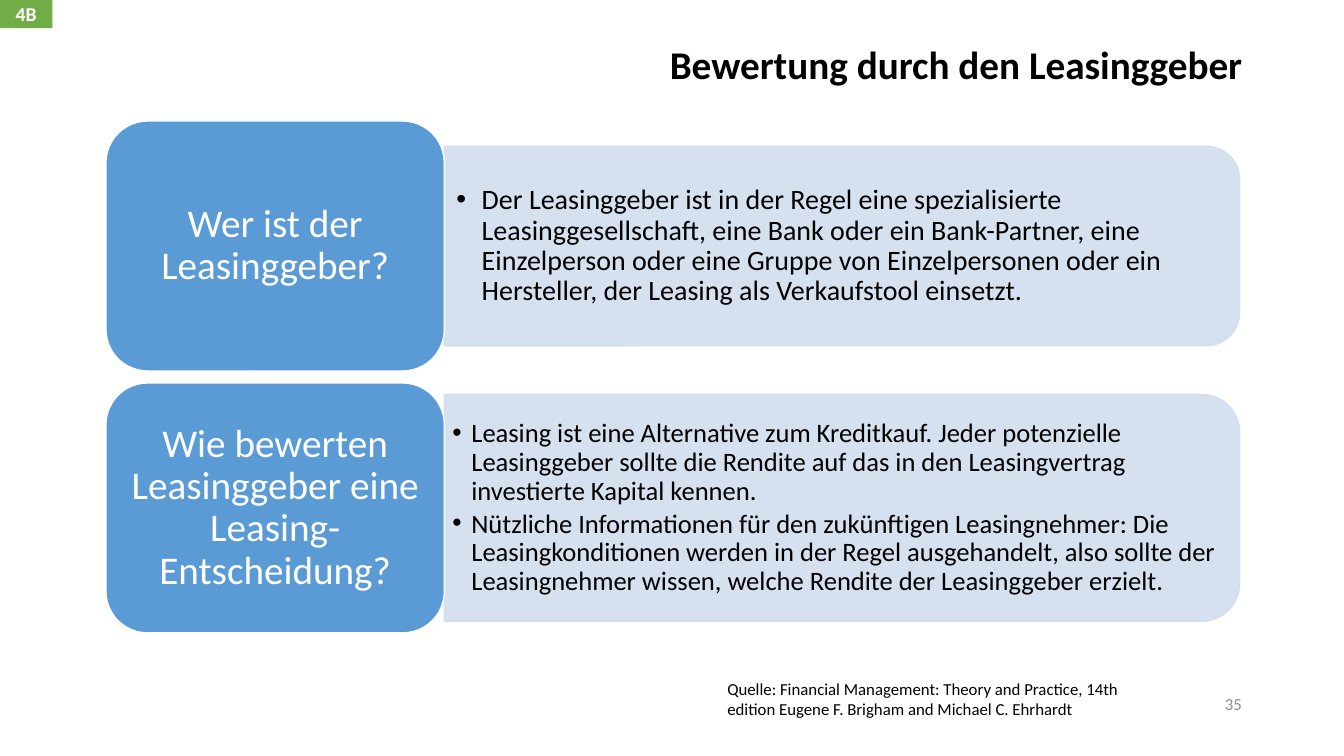
from lxml.etree import SubElement
from pptx import Presentation
from pptx.dml.color import RGBColor
from pptx.enum.shapes import MSO_SHAPE
from pptx.enum.text import MSO_ANCHOR, PP_ALIGN
from pptx.oxml.ns import qn
from pptx.util import Cm, Pt

TITLE = "Bewertung durch den Leasinggeber"
BADGE = "4B"
PAGE_NUMBER = "35"
SOURCE = ("Quelle: Financial Management: Theory and Practice, 14th edition "
          "Eugene F. Brigham and Michael C. Ehrhardt")
ROWS = [
    {"question": "Wer ist der Leasinggeber?",
     "answers": [
         "Der Leasinggeber ist in der Regel eine spezialisierte Leasinggesellschaft, "
         "eine Bank oder ein Bank-Partner, eine Einzelperson oder eine Gruppe von "
         "Einzelpersonen oder ein Hersteller, der Leasing als Verkaufstool einsetzt."],
     "style": "answer", "panel_height": 5.03, "indent": 0.64, "insets": (0.3, 0.15)},
    {"question": "Wie bewerten Leasinggeber eine Leasing-Entscheidung?",
     "answers": [
         "Leasing ist eine Alternative zum Kreditkauf. Jeder potenzielle Leasinggeber "
         "sollte die Rendite auf das in den Leasingvertrag investierte Kapital kennen.",
         "Nützliche Informationen für den zukünftigen Leasingnehmer: Die "
         "Leasingkonditionen werden in der Regel ausgehandelt, also sollte der "
         "Leasingnehmer wissen, welche Rendite der Leasinggeber erzielt."],
     "style": "dense_answer", "panel_height": 5.72, "indent": 0.48, "insets": (0.2, 0.1)},
]

THEME = {
    "font": "Calibri",
    "colors": {"card": "5B9BD5", "panel": "D2DEEF", "badge": "70AD47",
               "white": "FFFFFF", "black": "000000", "gray": "8C8C8C"},
    "panel_opacity": 90,
    "text": {  # size, bold, colour
        "title": (28, True, "black"), "question": (28, False, "white"),
        "answer": (20, False, "black"), "dense_answer": (19, False, "black"),
        "badge": (14, True, "white"), "small": (12, False, "black"),
        "page": (12, False, "gray"),
    },
}

# Lengths in centimetres
SLIDE_SIZE = (33.87, 19.05)
CARD_LEFT, CARD_TOP, CARD_WIDTH, CARD_HEIGHT = 2.67, 3.05, 8.53, 6.3
ROW_PITCH = 6.6
PANEL_LENGTH = 20.04
CORNER_SHARE = 0.05  # part of the panel height lost to its rounded corners
DEFAULT_INSETS = (0.25, 0.13)


def color(name):
    return RGBColor.from_string(THEME["colors"][name])


def add_solid(slide, kind, box, fill, line=None):
    shape = slide.shapes.add_shape(kind, *map(Cm, box))
    shape.shadow.inherit = False
    shape.fill.solid()
    shape.fill.fore_color.rgb = color(fill)
    if line:
        shape.line.color.rgb = color(line)
        shape.line.width = Pt(1)
    else:
        shape.line.fill.background()
    return shape


def set_opacity(shape, percent):
    for color_element in shape.fill._xPr.iter(qn("a:srgbClr")):
        SubElement(color_element, qn("a:alpha"), val=str(percent * 1000))


def add_bullet(paragraph, indent):
    properties = paragraph._p.get_or_add_pPr()
    properties.set("marL", str(Cm(indent)))
    properties.set("indent", str(-Cm(indent)))
    SubElement(properties, qn("a:buFont"), typeface="Arial")
    SubElement(properties, qn("a:buChar"), char="•")


def write(shape, texts, style, anchor=MSO_ANCHOR.MIDDLE, insets=DEFAULT_INSETS,
          indent=None, **paragraph_format):
    across, down = map(Cm, insets)
    frame = shape.text_frame
    frame_format = {"word_wrap": True, "vertical_anchor": anchor,
                    "margin_left": across, "margin_right": across,
                    "margin_top": down, "margin_bottom": down}
    for name, value in frame_format.items():
        setattr(frame, name, value)
    size, bold, color_name = THEME["text"][style]
    font_format = {"name": THEME["font"], "size": Pt(size), "bold": bold}
    for index, text in enumerate(texts):
        paragraph = frame.add_paragraph() if index else frame.paragraphs[0]
        for name, value in paragraph_format.items():
            setattr(paragraph, name, value)
        if indent:
            add_bullet(paragraph, indent)
        run = paragraph.add_run()
        run.text = text
        for name, value in font_format.items():
            setattr(run.font, name, value)
        run.font.color.rgb = color(color_name)


def add_text(slide, box, texts, style, **options):
    write(slide.shapes.add_textbox(*map(Cm, box)), texts, style, **options)


def add_row(slide, top, row):
    """Draw the answer panel and the question card, centred on one another."""
    height = row["panel_height"]
    panel_left = CARD_LEFT + CARD_WIDTH
    middle = top + CARD_HEIGHT / 2
    # The panel is an upright shape turned by 90 degrees around its centre.
    panel = add_solid(slide, MSO_SHAPE.ROUND_2_SAME_RECTANGLE,
                      (panel_left + (PANEL_LENGTH - height) / 2,
                       middle - PANEL_LENGTH / 2, height, PANEL_LENGTH),
                      "panel", "panel")
    panel.rotation = 90
    set_opacity(panel, THEME["panel_opacity"])

    corner = CORNER_SHARE * height
    add_text(slide, (panel_left, middle - height / 2 + corner,
                     PANEL_LENGTH - corner, height - 2 * corner),
             row["answers"], row["style"], insets=row["insets"],
             indent=row["indent"], level=1, line_spacing=0.9, space_after=Pt(3))

    card = add_solid(slide, MSO_SHAPE.ROUNDED_RECTANGLE,
                     (CARD_LEFT, top, CARD_WIDTH, CARD_HEIGHT), "card", "white")
    write(card, [row["question"]], "question", insets=(0.3, 0.15),
          alignment=PP_ALIGN.CENTER, line_spacing=0.9)


def main():
    presentation = Presentation()
    presentation.slide_width, presentation.slide_height = map(Cm, SLIDE_SIZE)
    slide = presentation.slides.add_slide(presentation.slide_layouts[6])

    for index, row in enumerate(ROWS):
        add_row(slide, CARD_TOP + index * ROW_PITCH, row)

    add_text(slide, (2.34, 1.02, 29.21, 1.45), [TITLE], "title",
             anchor=MSO_ANCHOR.TOP, alignment=PP_ALIGN.RIGHT, line_spacing=0.9)
    badge = add_solid(slide, MSO_SHAPE.RECTANGLE, (0, 0, 1.32, 0.71), "badge")
    write(badge, [BADGE], "badge", alignment=PP_ALIGN.CENTER)
    add_text(slide, (23.93, 17.22, 7.62, 1.02), [PAGE_NUMBER], "page",
             alignment=PP_ALIGN.RIGHT)
    add_text(slide, (18.08, 16.97, 10.72, 1.27), [SOURCE], "small",
             anchor=MSO_ANCHOR.TOP)

    presentation.save("out.pptx")


if __name__ == "__main__":
    main()
